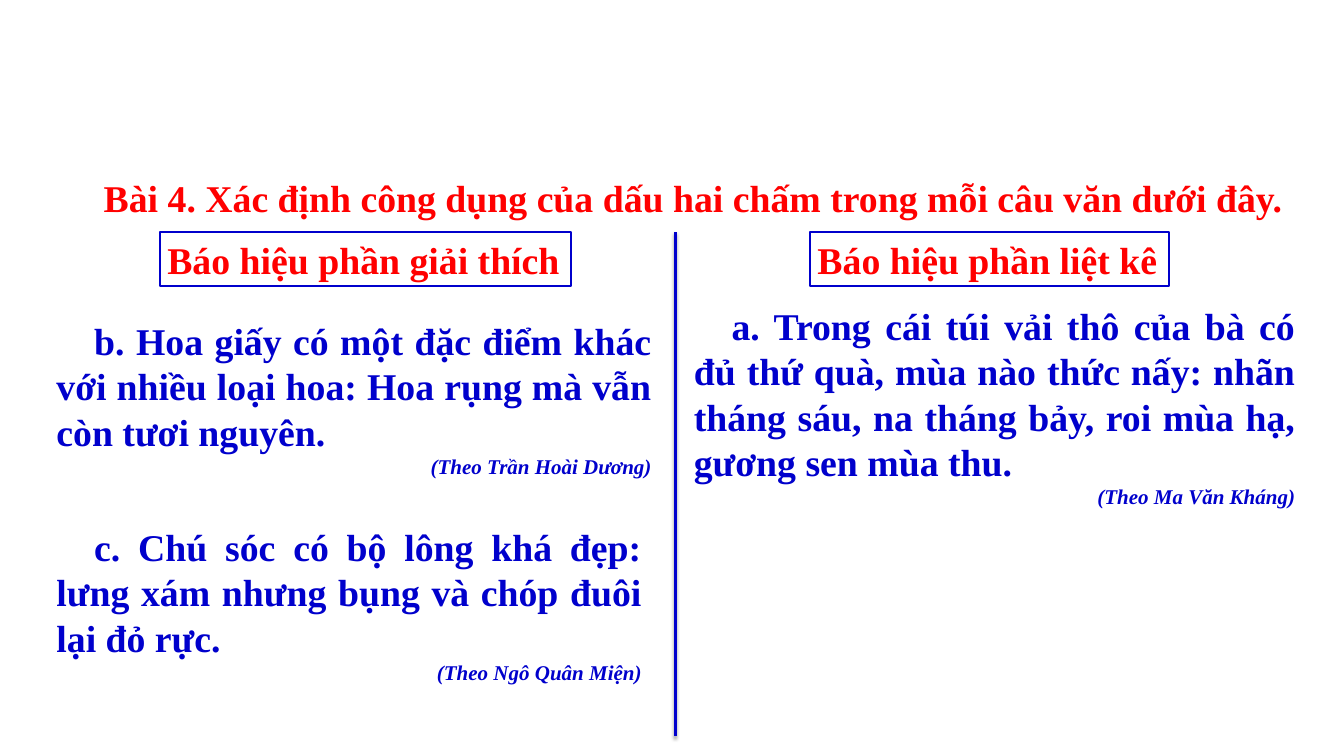
import pptx
import pptx.dml.color
import pptx.enum.shapes
import pptx.enum.text
import pptx.oxml
import pptx.oxml.ns
import pptx.util
from pptx.util import Cm

TITLE = "Bài 4. Xác định công dụng của dấu hai chấm trong mỗi câu văn dưới đây."
HEADINGS = [
    ("Báo hiệu phần giải thích", 5.38, 13.84),
    ("Báo hiệu phần liệt kê", 27.25, 12.07),
]
QUOTES = [
    ("a. Trong cái túi vải thô của bà có đủ thứ quà, mùa nào thức nấy: nhãn tháng sáu, "
     "na tháng bảy, roi mùa hạ, gương sen mùa thu.",
     "(Theo Ma Văn Kháng)", (23.09, 10.06, 20.73, 7.26)),
    ("b. Hoa giấy có một đặc điểm khác với nhiều loại hoa: Hoa rụng mà vẫn còn tươi nguyên.",
     "(Theo Trần Hoài Dương)", (1.65, 10.57, 20.52, 5.74)),
    ("c. Chú sóc có bộ lông khá đẹp: lưng xám nhưng bụng và chóp đuôi lại đỏ rực.",
     "(Theo Ngô Quân Miện)", (1.65, 17.5, 20.19, 5.74)),
]
THEME = {
    "font": "Times New Roman",
    "red": pptx.dml.color.RGBColor(255, 0, 0),
    "blue": pptx.dml.color.RGBColor(0, 0, 204),
    "white": pptx.dml.color.RGBColor(255, 255, 255),
    "body": pptx.util.Pt(36),
    "credit": pptx.util.Pt(20),
}
ALIGN = pptx.enum.text.PP_ALIGN
HEADING_TOP = 7.82
LINE_HEIGHT = 1.8
DIVIDER_X = 22.71
DIVIDER_END = 24.77
QUOTE_INDENT = 1.27
SHADOW = (
    f'<a:effectLst {pptx.oxml.ns.nsdecls("a")}>'
    '<a:outerShdw blurRad="40000" dist="23000" dir="5400000" rotWithShape="0">'
    '<a:srgbClr val="000000"><a:alpha val="35000"/></a:srgbClr>'
    '</a:outerShdw></a:effectLst>'
)


def write(para, text, color="blue", size="body", italic=False, align=ALIGN.JUSTIFY, indent=0):
    para.alignment = align
    if indent:
        properties = para._p.get_or_add_pPr()
        properties.set("marL", "0")
        properties.set("indent", str(int(Cm(indent))))
    span = para.add_run()
    span.text = text
    span.font.name = THEME["font"]
    span.font.size = THEME[size]
    span.font.bold = True
    span.font.italic = italic
    span.font.color.rgb = THEME[color]


def set_frame(box, wrap=True):
    frame = box.text_frame
    frame.word_wrap = wrap
    frame.auto_size = pptx.enum.text.MSO_AUTO_SIZE.SHAPE_TO_FIT_TEXT
    return frame


def add_text(page, area):
    return set_frame(page.shapes.add_textbox(*map(Cm, area)))


def add_heading(page, text, left, width):
    box = page.shapes.add_shape(
        pptx.enum.shapes.MSO_SHAPE.RECTANGLE,
        Cm(left), Cm(HEADING_TOP), Cm(width), Cm(LINE_HEIGHT))
    box.shadow.inherit = False
    box.fill.solid()
    box.fill.fore_color.rgb = THEME["white"]
    box.line.color.rgb = THEME["blue"]
    box.line.width = pptx.util.Pt(2)
    write(set_frame(box, wrap=False).paragraphs[0], text, color="red")


def add_divider(page):
    divider = page.shapes.add_connector(
        pptx.enum.shapes.MSO_CONNECTOR.STRAIGHT,
        Cm(DIVIDER_X), Cm(HEADING_TOP), Cm(DIVIDER_X), Cm(DIVIDER_END))
    divider.line.color.rgb = THEME["blue"]
    divider.line.width = pptx.util.Pt(3)
    divider._element.spPr.append(pptx.oxml.parse_xml(SHADOW))


def main():
    deck = pptx.Presentation()
    deck.slide_width, deck.slide_height = Cm(45.21), Cm(25.4)
    page = deck.slides.add_slide(deck.slide_layouts[6])
    title = add_text(page, (1.65, 5.77, 42.11, LINE_HEIGHT))
    write(title.paragraphs[0], TITLE, color="red", indent=1.59)
    for quote, credit, area in QUOTES:
        frame = add_text(page, area)
        write(frame.paragraphs[0], quote, indent=QUOTE_INDENT)
        write(frame.add_paragraph(), credit, size="credit", italic=True,
              align=ALIGN.RIGHT, indent=QUOTE_INDENT)
    for heading in HEADINGS:
        add_heading(page, *heading)
    add_divider(page)
    deck.save("out.pptx")


if __name__ == "__main__":
    main()
